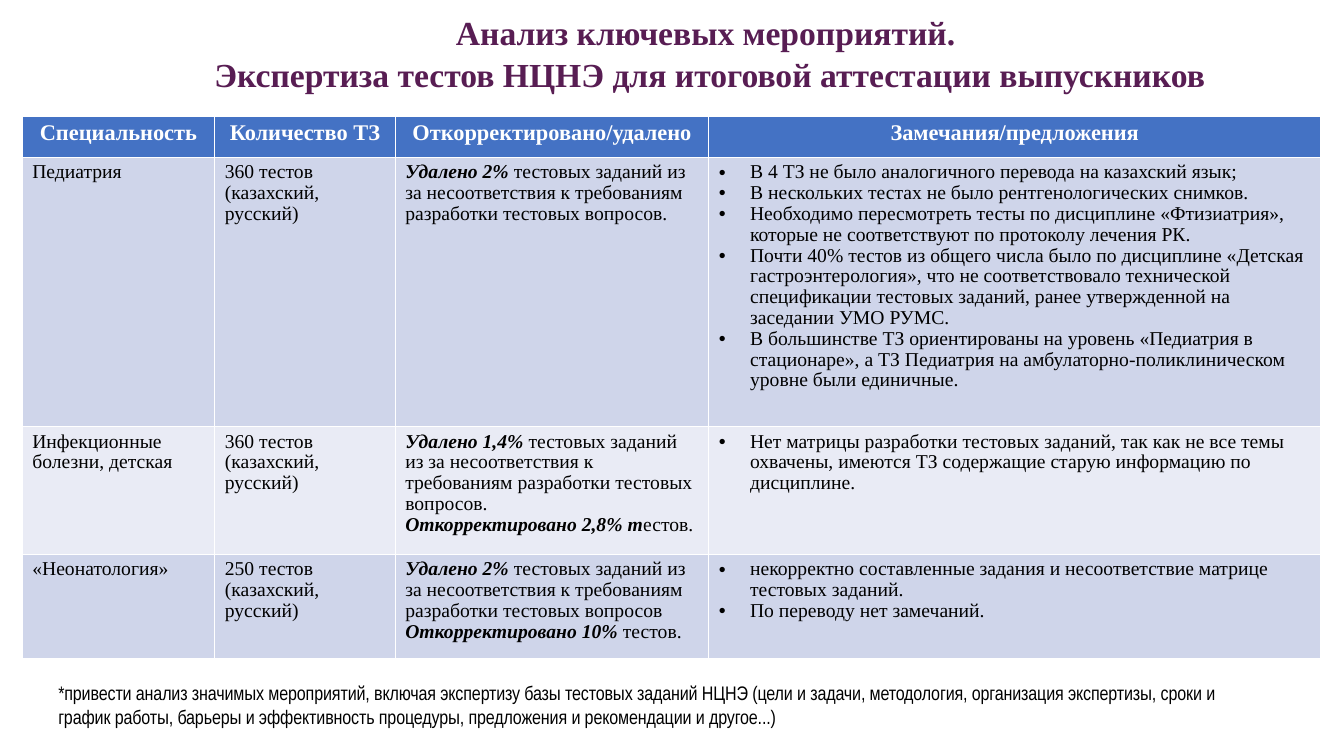
from lxml.etree import SubElement
from pptx import Presentation
from pptx.dml.color import RGBColor
from pptx.enum.text import MSO_ANCHOR, PP_ALIGN
from pptx.oxml.ns import qn
from pptx.util import Inches, Pt

PLUM = RGBColor(0x58, 0x1D, 0x53)
BLUE = RGBColor(0x44, 0x72, 0xC4)
BANDS = [RGBColor(0xCF, 0xD5, 0xEA), RGBColor(0xE9, 0xEB, 0xF5)]
WHITE = RGBColor(0xFF, 0xFF, 0xFF)
BLACK = RGBColor(0, 0, 0)
SERIF = "Times New Roman"

TITLE = ["Анализ ключевых мероприятий. ",
         "Экспертиза тестов НЦНЭ для итоговой аттестации выпускников"]
NOTE = ("*привести анализ значимых мероприятий, включая экспертизу базы тестовых "
        "заданий НЦНЭ (цели и задачи, методология, организация экспертизы, сроки и "
        "график работы, барьеры и эффективность процедуры, предложения и "
        "рекомендации и другое...)")
HEADS = ["Специальность", "Количество ТЗ", "Откорректировано/удалено",
         "Замечания/предложения"]
LANGS = "(казахский, русский)"
REASON = ("тестовых заданий из за несоответствия к требованиям разработки "
          "тестовых вопросов")
# Specialty, number of tests, (strong, plain) results, remarks
ROWS = [
    ("Педиатрия", "360 тестов",
     [("Удалено 2% ", REASON + ".")],
     ["В 4 ТЗ не было аналогичного перевода на казахский язык;",
      "В нескольких тестах не было рентгенологических снимков.",
      "Необходимо пересмотреть тесты по дисциплине «Фтизиатрия», которые не "
      "соответствуют по протоколу лечения РК.",
      "Почти 40% тестов из общего числа было по дисциплине «Детская "
      "гастроэнтерология», что не соответствовало технической спецификации "
      "тестовых заданий, ранее утвержденной на заседании УМО РУМС.",
      "В большинстве ТЗ ориентированы на уровень «Педиатрия в стационаре», а ТЗ "
      "Педиатрия на амбулаторно-поликлиническом уровне были единичные."]),
    ("Инфекционные болезни, детская", "360 тестов",
     [("Удалено 1,4% ", REASON + "."), ("Откорректировано 2,8% т", "естов.")],
     ["Нет матрицы разработки тестовых заданий, так как не все темы охвачены, "
      "имеются ТЗ содержащие старую информацию по дисциплине."]),
    ("«Неонатология»", "250 тестов",
     [("Удалено 2% ", REASON), ("Откорректировано 10% ", "тестов.")],
     ["некорректно составленные задания и несоответствие матрице тестовых заданий.",
      "По переводу нет замечаний."]),
]
WIDTHS = [1.91, 1.79, 3.11, 6.07]
HEIGHTS = [0.41, 2.67, 1.27, 1.03]


def style(par, size, color, bold=False, name=SERIF):
    font = par.font
    font.name, font.size, font.bold = name, Pt(size), bold
    font.color.rgb = color


def bullet(par):
    props = par._p.get_or_add_pPr()
    props.set("marL", str(Inches(0.31)))
    props.set("indent", str(-Inches(0.31)))
    SubElement(props, qn("a:buFont")).set("typeface", "Arial")
    SubElement(props, qn("a:buChar")).set("char", "•")


def write(cell, lines, fill, dots=False):
    """Fill a body cell; a line is plain text or a (strong, plain) pair."""
    cell.fill.solid()
    cell.fill.fore_color.rgb = fill
    frame = cell.text_frame
    for i, line in enumerate(lines):
        par = frame.add_paragraph() if i else frame.paragraphs[0]
        if dots:
            bullet(par)
        par.line_spacing = 0.96
        style(par, 14, BLACK)
        if isinstance(line, str):
            par.add_run().text = line
            continue
        strong, plain = par.add_run(), par.add_run()
        strong.text, plain.text = line
        strong.font.bold = strong.font.italic = True


def place(shape, left, top, width, height):
    shape.left, shape.top = Inches(left), Inches(top)
    shape.width, shape.height = Inches(width), Inches(height)


deck = Presentation()
deck.slide_width, deck.slide_height = Inches(13.33), Inches(7.5)
slide = deck.slides.add_slide(deck.slide_layouts[5])

title = slide.shapes.title
place(title, 0.74, 0.05, 12.6, 0.91)
title.text_frame.text = "\n".join(TITLE)
title.text_frame.vertical_anchor = MSO_ANCHOR.TOP
for par in title.text_frame.paragraphs:
    par.alignment = PP_ALIGN.CENTER
    par.line_spacing = 1.05
    style(par, 24, PLUM, True)

table = slide.shapes.add_table(
    len(HEIGHTS), len(WIDTHS), Inches(0.22), Inches(1.15),
    Inches(sum(WIDTHS)), Inches(sum(HEIGHTS))).table
for col, width in zip(table.columns, WIDTHS):
    col.width = Inches(width)
for row, height in zip(table.rows, HEIGHTS):
    row.height = Inches(height)
for cell, head in zip(table.rows[0].cells, HEADS):
    cell.fill.solid()
    cell.fill.fore_color.rgb = BLUE
    cell.text = head
    par = cell.text_frame.paragraphs[0]
    par.alignment = PP_ALIGN.CENTER
    style(par, 16, WHITE, True)
for i, (field, count, results, remarks) in enumerate(ROWS):
    columns = [[field], [count, LANGS], results, remarks]
    for j, lines in enumerate(columns):
        write(table.cell(i + 1, j), lines, BANDS[i % 2], dots=j == 3)

note = slide.shapes.add_textbox(
    Inches(0.48), Inches(6.71), Inches(11.8), Inches(0.57))
note.text_frame.word_wrap = True
par = note.text_frame.paragraphs[0]
run = par.add_run()
run.text = NOTE
run._r.get_or_add_rPr().set("spc", "-10")
style(par, 14, BLACK, name="Arial Narrow")

deck.save("out.pptx")
